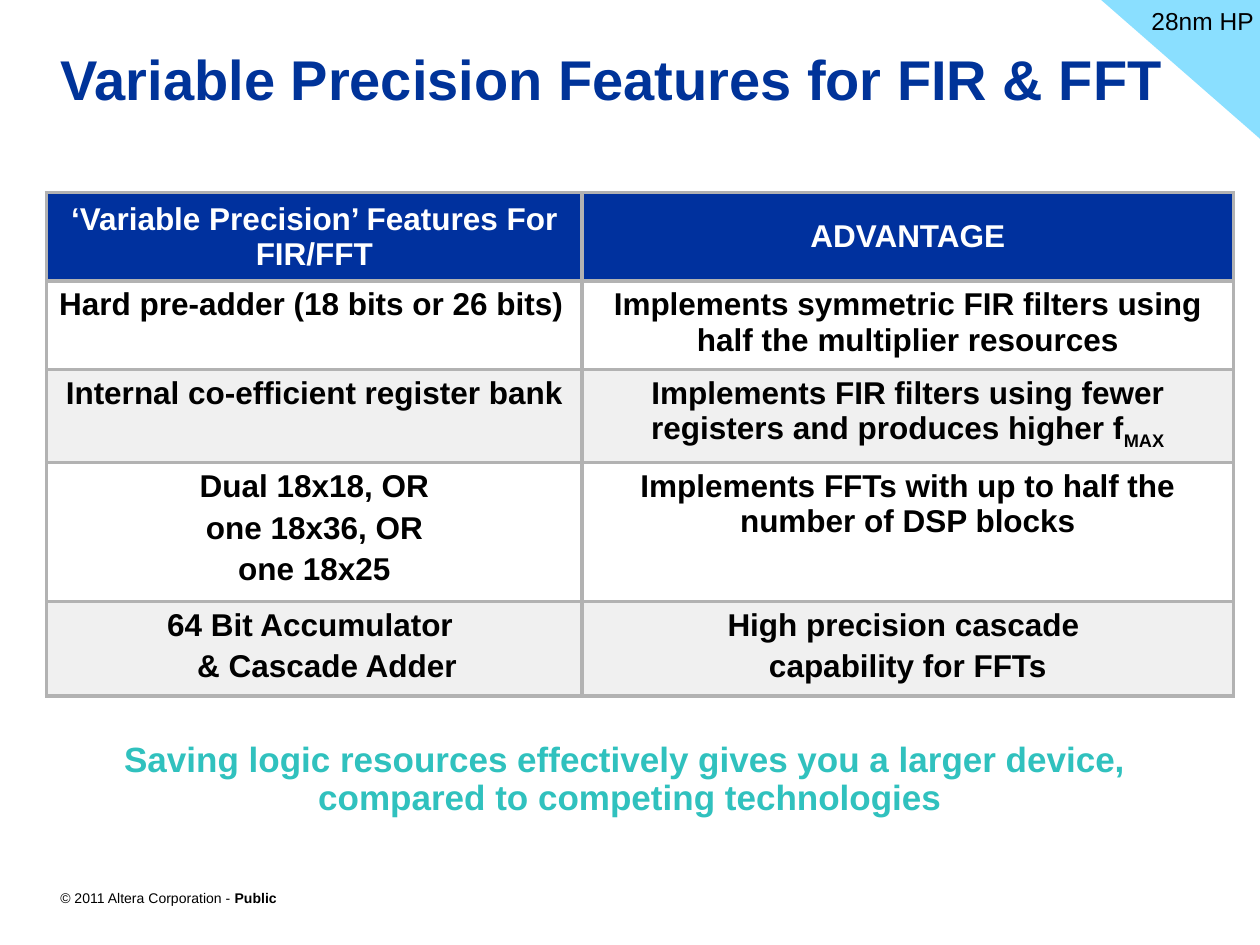
from lxml.etree import SubElement
from pptx import Presentation
from pptx.dml.color import RGBColor
from pptx.enum.shapes import MSO_SHAPE as Shape
from pptx.enum.text import MSO_ANCHOR as Anchor, MSO_AUTO_SIZE as AutoSize, PP_ALIGN as Align
from pptx.oxml.ns import qn
from pptx.util import Inches, Pt

COLORS = {
    "title": "003399", "header": "00319E", "white": "FFFFFF", "band": "F0F0F0",
    "border": "B2B2B2", "text": "000000", "closing": "30C1BE", "corner": "8ADFFF",
}
FONT = "Arial"
WIDTH, HEIGHT = Inches(10), Inches(7.5)
COLUMN_SHARES = (42.5, 51.7)
ROW_SHARES = (8.8, 8.8, 9.6, 13.87, 9.87)
TABLE_ROWS = [
    (["‘Variable Precision’ Features For FIR/FFT"], ["ADVANTAGE"]),
    (["Hard pre-adder (18 bits or 26 bits)"],
     ["Implements symmetric FIR filters using half the multiplier resources"]),
    (["Internal co-efficient register bank"],
     ["Implements FIR filters using fewer registers and produces higher f"]),
    (["Dual 18x18, OR", "one 18x36, OR", "one 18x25"],
     ["Implements FFTs with up to half the number of DSP blocks"]),
    (["64 Bit Accumulator ", "& Cascade Adder"],
     ["High precision cascade ", "capability for FFTs"]),
]
ROW_FILLS = ("header", "white", "band", "white", "band")


def across(share):
    return round(WIDTH * share / 100)


def down(share):
    return round(HEIGHT * share / 100)


def area(left, top, width, height):
    return across(left), down(top), across(width), down(height)


def color(name):
    return RGBColor.from_string(COLORS[name])


def add_run(paragraph, text, size, color_name, bold=False):
    run = paragraph.add_run()
    run.text = text
    font = run.font
    font.name, font.size, font.bold = FONT, Pt(size), bold
    font.color.rgb = color(color_name)
    return run


def add_text(shapes, box, wrap=True):
    frame = shapes.add_textbox(*box).text_frame
    frame.word_wrap = wrap
    return frame.paragraphs[0]


def add_title(slide):
    title = slide.shapes.title
    title.left, title.top, title.width, title.height = area(3.8, 4, 91.1, 13.33)
    frame = title.text_frame
    frame.auto_size, frame.vertical_anchor = AutoSize.NONE, Anchor.TOP
    paragraph = frame.paragraphs[0]
    paragraph.alignment = Align.LEFT
    add_run(paragraph, "Variable Precision Features for FIR & FFT", 32, "title", True)


def add_borders(cell):
    properties = cell._tc.get_or_add_tcPr()
    for side in ("a:lnL", "a:lnR", "a:lnT", "a:lnB"):
        line = SubElement(properties, qn(side), w=str(Pt(2.25)))
        fill = SubElement(line, qn("a:solidFill"))
        SubElement(fill, qn("a:srgbClr"), val=COLORS["border"])


def fill_cell(cell, lines, fill_name, is_header):
    add_borders(cell)
    cell.fill.solid()
    cell.fill.fore_color.rgb = color(fill_name)
    cell.vertical_anchor = Anchor.MIDDLE if is_header else Anchor.TOP
    frame = cell.text_frame
    for index, line in enumerate(lines):
        paragraph = frame.add_paragraph() if index else frame.paragraphs[0]
        paragraph.alignment = Align.CENTER
        if index:
            paragraph.space_before = Pt(3.6)
        add_run(paragraph, line, 18, "white" if is_header else "text", True)


def add_feature_table(slide):
    box = area(3.7, 20.4, sum(COLUMN_SHARES), sum(ROW_SHARES))
    table = slide.shapes.add_table(len(ROW_SHARES), len(COLUMN_SHARES), *box).table
    for column, share in zip(table.columns, COLUMN_SHARES):
        column.width = across(share)
    for index, (row, share) in enumerate(zip(table.rows, ROW_SHARES)):
        row.height = down(share)
        for cell, lines in zip(row.cells, TABLE_ROWS[index]):
            fill_cell(cell, lines, ROW_FILLS[index], index == 0)
    table.cell(1, 0).text_frame.paragraphs[0].alignment = Align.LEFT
    frequency = table.cell(2, 1).text_frame.paragraphs[0]
    subscript = add_run(frequency, "MAX", 18, "text", True)
    subscript.font._element.set("baseline", "-25000")
    cascade = table.cell(4, 0).text_frame.paragraphs[1]
    cascade._p.get_or_add_pPr().set("marL", str(across(2)))


def add_closing(slide):
    paragraph = add_text(slide.shapes, area(0, 77.87, 100, 9.33))
    paragraph.alignment, paragraph.line_spacing = Align.CENTER, 0.9
    add_run(paragraph, "Saving logic resources effectively gives you a larger device, ",
            20, "closing", True)
    paragraph.add_line_break()
    add_run(paragraph, "compared to competing technologies", 20, "closing", True)


def add_corner(slide):
    group = slide.shapes.add_group_shape()
    triangle = group.shapes.add_shape(Shape.RIGHT_TRIANGLE, *area(87.4, 0, 12.7, 14.8))
    triangle.rotation = 180
    triangle.shadow.inherit = False
    triangle.fill.solid()
    triangle.fill.fore_color.rgb = color("corner")
    triangle.line.fill.background()
    label = add_text(group.shapes, area(90.4, 0, 11.2, 4.53))
    add_run(label, "28nm HP", 14, "text")


def add_copyright(slide):
    paragraph = add_text(slide.shapes, area(3.8, 93.5, 46.5, 5.6))
    add_run(paragraph, "© 2011 Altera Corporation - ", 8, "text")
    add_run(paragraph, "Public", 8, "text", True)


def main():
    """Build the slide on variable precision features and save it."""
    presentation = Presentation()
    presentation.slide_width, presentation.slide_height = WIDTH, HEIGHT
    slide = presentation.slides.add_slide(presentation.slide_layouts[5])
    add_copyright(slide)
    add_title(slide)
    add_feature_table(slide)
    add_closing(slide)
    add_corner(slide)
    presentation.save("out.pptx")


if __name__ == "__main__":
    main()
